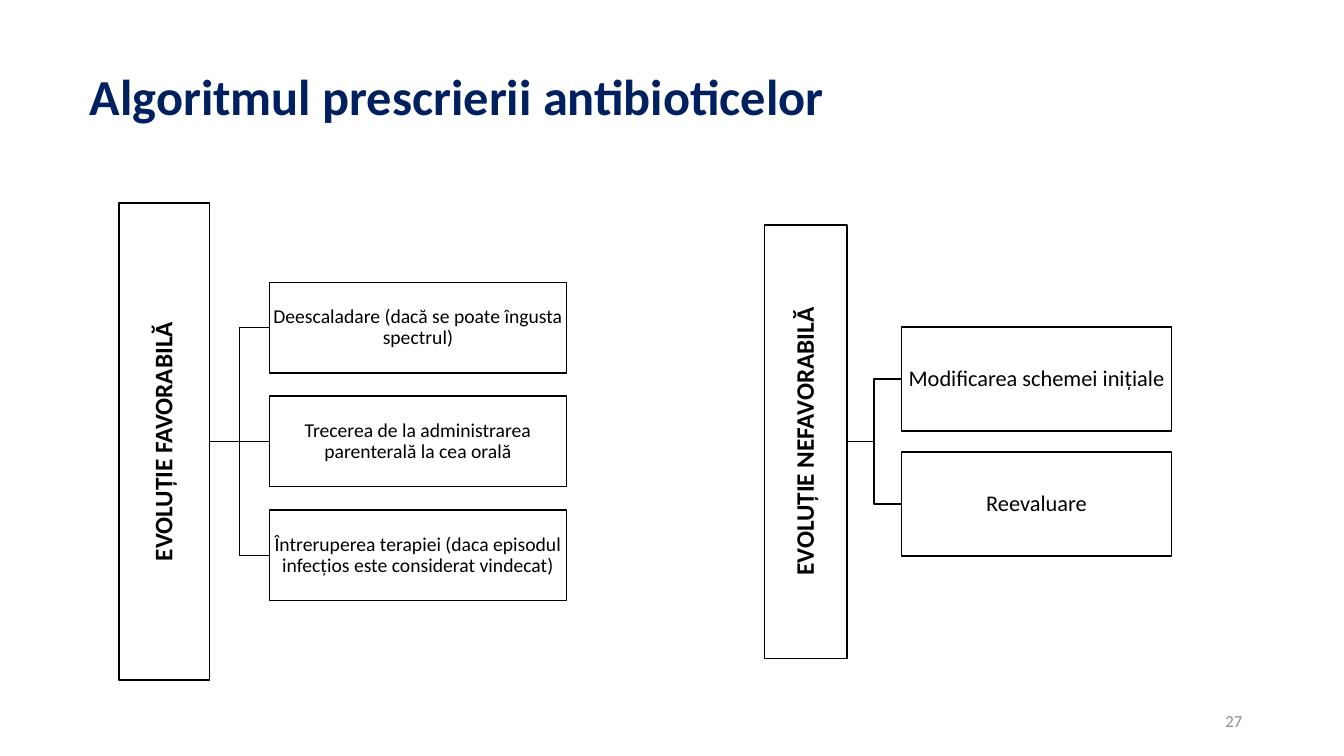
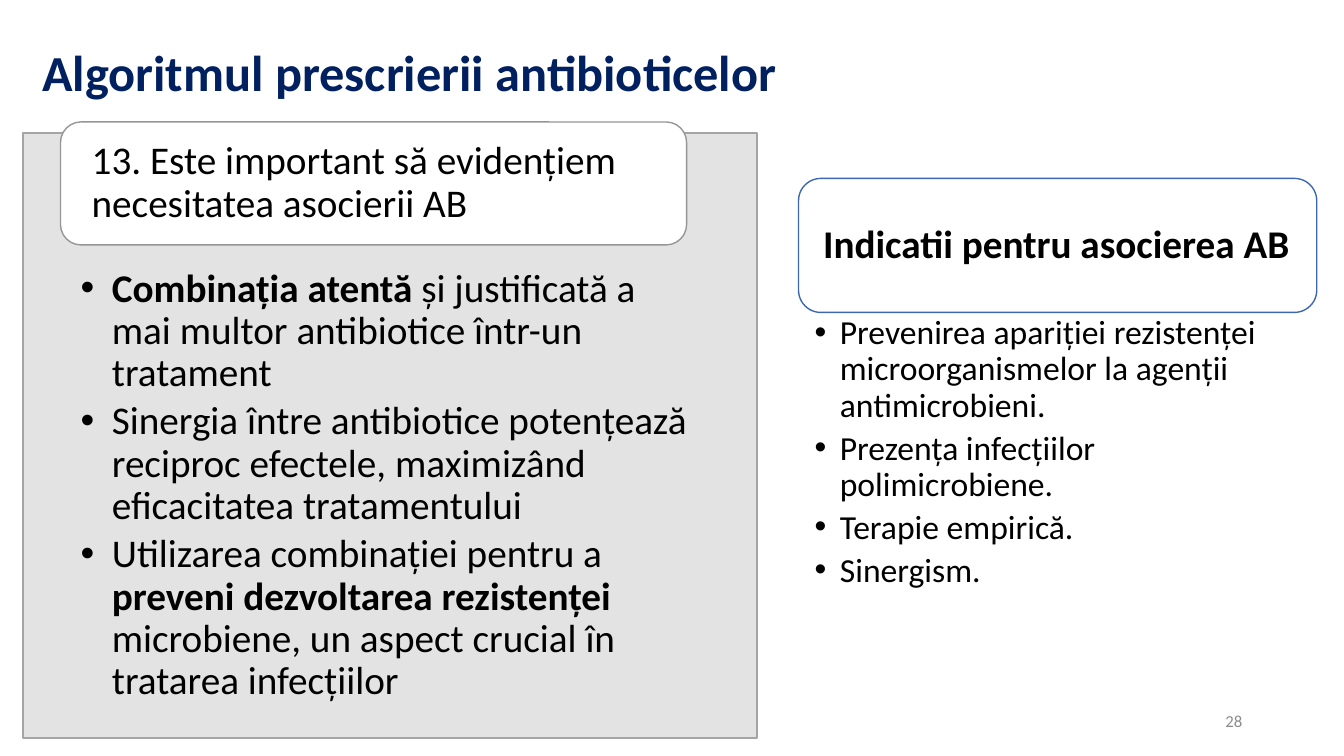
from lxml.etree import SubElement
from pptx import Presentation
from pptx.dml.color import RGBColor
from pptx.enum.shapes import MSO_CONNECTOR as Connector, MSO_SHAPE as Shape
from pptx.enum.text import MSO_ANCHOR as Anchor, MSO_AUTO_SIZE as AutoSize, PP_ALIGN as Align
from pptx.oxml.ns import qn
from pptx.util import Inches, Pt

NAVY, BLACK, WHITE = "002060", "000000", "FFFFFF"
PANEL, PANEL_EDGE, LABEL_EDGE = "E1E1E1", "A5A5A5", "969696"
BLUE, NUMBER_GREY = "3E67B2", "8C8C8C"
TITLE = "Algoritmul prescrierii antibioticelor"


def paint(fill, color):
    fill.solid()
    fill.fore_color.rgb = RGBColor.from_string(color)


def write(shape, paragraphs, size, color=BLACK, bold=False, align=Align.LEFT,
          anchor=Anchor.MIDDLE, insets=(0.1, 0.05, 0.1, 0.05), spacing=0.9,
          after=0, indent=0):
    left, top, right, bottom = map(Inches, insets)
    frame_format = {
        "word_wrap": True, "auto_size": AutoSize.NONE, "vertical_anchor": anchor,
        "margin_left": left, "margin_top": top,
        "margin_right": right, "margin_bottom": bottom,
    }
    paragraph_format = {
        "alignment": align, "line_spacing": spacing,
        "space_before": Pt(0), "space_after": Pt(after),
    }
    frame = shape.text_frame
    for name, value in frame_format.items():
        setattr(frame, name, value)
    for index, runs in enumerate(paragraphs):
        paragraph = frame.add_paragraph() if index else frame.paragraphs[0]
        if indent:
            properties = paragraph._p.get_or_add_pPr()
            properties.set("marL", str(Inches(indent)))
            properties.set("indent", str(-Inches(indent)))
            SubElement(properties, qn("a:buFont")).set("typeface", "Arial")
            SubElement(properties, qn("a:buChar")).set("char", "•")
        for name, value in paragraph_format.items():
            setattr(paragraph, name, value)
        for text, emphasis in runs:
            run = paragraph.add_run()
            run.text = text
            font_format = {"name": "Calibri", "size": Pt(size), "bold": bold or emphasis}
            for name, value in font_format.items():
                setattr(run.font, name, value)
            paint(run.font.fill, color)


presentation = Presentation()
presentation.slide_width = Inches(13.33)
presentation.slide_height = Inches(7.5)

TITLE_ONLY, TWO_CONTENT = 5, 3
slides = []
for layout, left, top, number in [(TITLE_ONLY, 0.79, 0.26, "27"),
                                  (TWO_CONTENT, 0.32, 0.02, "28")]:
    slide = presentation.slides.add_slide(presentation.slide_layouts[layout])
    title = slide.shapes.title
    title.left, title.top, title.width, title.height = map(Inches, (left, top, 11.5, 1.45))
    write(title, [[(TITLE, True)]], 36, NAVY)
    number_box = slide.shapes.add_textbox(*map(Inches, (9.42, 6.95, 3, 0.4)))
    write(number_box, [[(number, False)]], 12, NUMBER_GREY, align=Align.RIGHT, spacing=1)
    slides.append(slide)
outcomes, combination = slides

MIDDLE = 4.38
trees = [
    {"heading": "EVOLUȚIE FAVORABILĂ", "left": 1.18, "bar": (0.9, 4.73), "gap": 0.59,
     "box": (2.95, 0.9), "pitch": 1.13, "size": 14,
     "steps": ["Deescaladare (dacă se poate îngusta spectrul)",
               "Trecerea de la administrarea parenterală la cea orală",
               "Întreruperea terapiei (daca episodul infecțios este considerat vindecat)"]},
    {"heading": "EVOLUȚIE NEFAVORABILĂ", "left": 7.58, "bar": (0.82, 4.3), "gap": 0.54,
     "box": (2.68, 1.03), "pitch": 1.24, "size": 16,
     "steps": ["Мodificarea schemei inițiale", "Reevaluare"]},
]
for tree in trees:
    bar_width, bar_height = tree["bar"]
    box_width, box_height = tree["box"]
    bar_right = tree["left"] + bar_width
    box_left = bar_right + tree["gap"]
    bar_left = tree["left"] + (bar_width - bar_height) / 2
    boxes = [(tree["heading"], bar_left, MIDDLE, bar_height, bar_width, 270, 18, True)]
    for index, step in enumerate(tree["steps"]):
        center = MIDDLE + (index - (len(tree["steps"]) - 1) / 2) * tree["pitch"]
        boxes.append((step, box_left, center, box_width, box_height, 0, tree["size"], False))
        kind = Connector.STRAIGHT if center == MIDDLE else Connector.ELBOW
        branch = outcomes.shapes.add_connector(
            kind, *map(Inches, (bar_right, MIDDLE, box_left, center)))
        paint(branch.line.fill, BLACK)
        branch.line.width = Pt(1)
        SubElement(branch._element.spPr, qn("a:effectLst"))
    for text, left, center, width, height, rotation, size, bold in boxes:
        box = outcomes.shapes.add_shape(
            Shape.RECTANGLE, *map(Inches, (left, center - height / 2, width, height)))
        box.rotation = rotation
        box.shadow.inherit = False
        paint(box.fill, WHITE)
        paint(box.line.fill, BLACK)
        box.line.width = Pt(1)
        write(box, [[(text, bold)]], size, align=Align.CENTER, insets=(0.01,) * 4)

reasons = [
    [("Combinația atentă ", True),
     ("și justificată a mai multor antibiotice într-un tratament", False)],
    [("Sinergia între antibiotice potențează reciproc efectele, maximizând "
      "eficacitatea tratamentului", False)],
    [("Utilizarea combinației pentru a ", False),
     ("preveni dezvoltarea rezistenței ", True),
     ("microbiene, un aspect crucial în tratarea infecțiilor", False)],
]
indications = [[(text, False)] for text in (
    "Prevenirea apariției rezistenței microorganismelor la agenții antimicrobieni.",
    "Prezența infecțiilor polimicrobiene.",
    "Terapie empirică.",
    "Sinergism.",
)]
panel, indication_list = list(combination.placeholders)[1:3]
for body, place, paragraphs, size, insets, after, indent in [
    (panel, (0.23, 1.32, 7.28, 6), reasons, 28, (0.57, 1.34, 0.57, 0.22), 4.2, 0.31),
    (indication_list, (7.92, 3.1, 5.14, 2.94), indications, 24,
     (0.16, 0.03, 0.19, 0.03), 4.8, 0.25),
]:
    body.left, body.top, body.width, body.height = map(Inches, place)
    write(body, paragraphs, size, anchor=Anchor.TOP, insets=insets, after=after, indent=indent)

paint(panel.fill, PANEL)
panel_color = panel._element.spPr.find(qn("a:solidFill")).find(qn("a:srgbClr"))
SubElement(panel_color, qn("a:alpha")).set("val", "90000")
paint(panel.line.fill, PANEL_EDGE)
panel.line.width = Pt(1)

for text, place, edge, bold, insets in [
    ("13. Este important să evidențiem necesitatea asocierii AB",
     (0.6, 1.21, 6.21, 1.22), LABEL_EDGE, False, (0.25, 0.06, 0.25, 0.06)),
    ("Indicatii pentru asocierea AB",
     (7.92, 1.77, 5.14, 1.33), BLUE, True, (0.18,) * 4),
]:
    label = combination.shapes.add_shape(Shape.ROUNDED_RECTANGLE, *map(Inches, place))
    label.shadow.inherit = False
    paint(label.fill, WHITE)
    paint(label.line.fill, edge)
    label.line.width = Pt(1)
    write(label, [[(text, bold)]], 28, insets=insets)

presentation.save("out.pptx")
